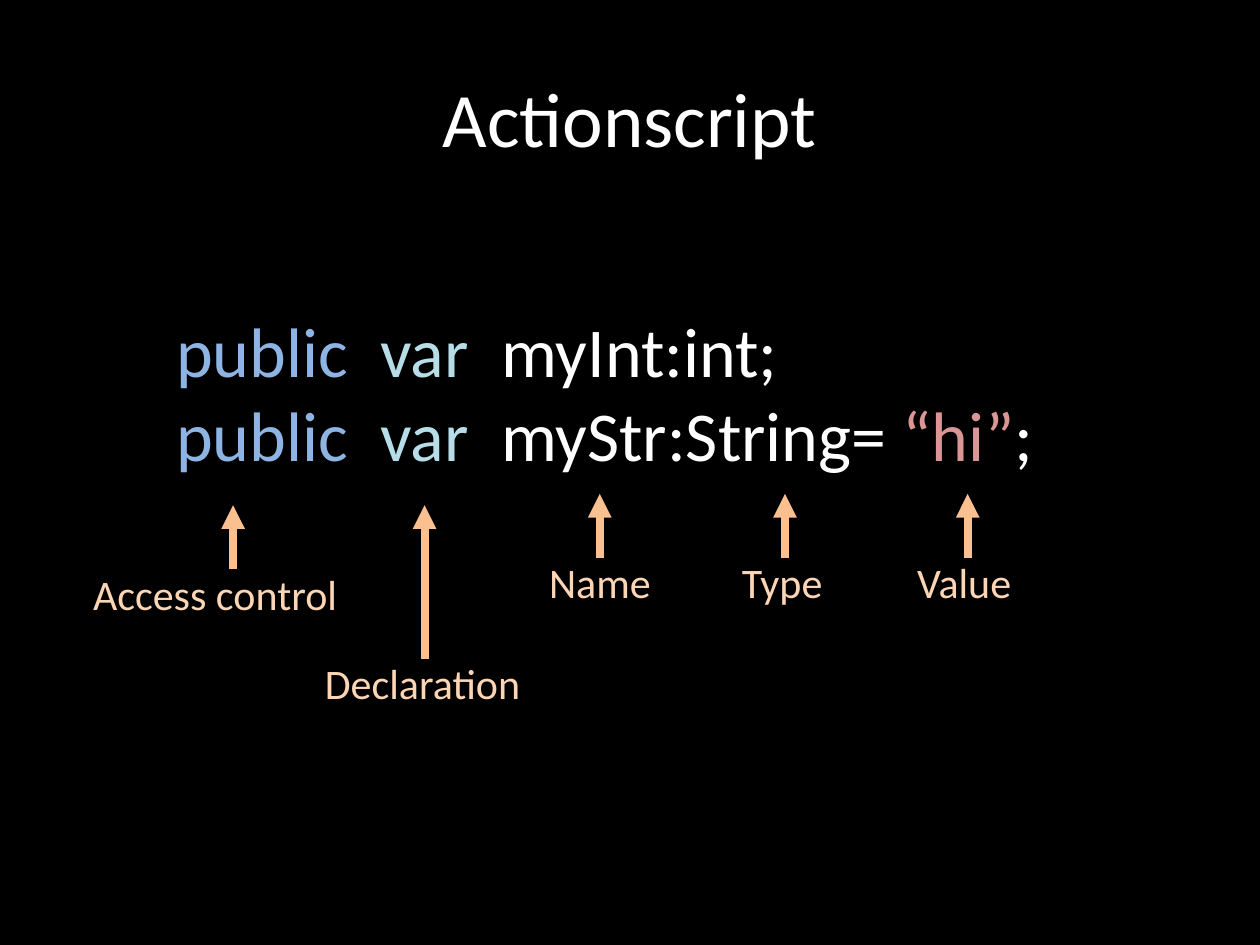
from dataclasses import dataclass

from pptx import Presentation
from pptx.dml.color import RGBColor
from pptx.enum import shapes, text
from pptx.oxml.ns import qn
from pptx.util import Inches, Pt
from lxml import etree


@dataclass(frozen=True)
class Theme:
    font: str = "Calibri"
    background: str = "000000"
    plain: str = "FFFFFF"
    access: str = "8EB4E3"
    declaration: str = "B7DEE8"
    value: str = "D99694"
    label: str = "FCD5B5"
    arrow: str = "FAC090"
    title_size: float = 44
    code_size: float = 40
    label_size: float = 24
    arrow_width: float = 4.5


@dataclass(frozen=True)
class Span:
    words: str
    colour: str


@dataclass(frozen=True)
class Callout:
    words: str
    left: float
    width: float
    arrow_x: float
    arrow_tip: float
    arrow_foot: float


THEME = Theme()
LABEL_RISE = 0.06  # a label's box starts slightly above the foot of its arrow
CODE_TABS = (1.62, 2.58)

KEYWORDS = [Span("public\t", THEME.access), Span("var\t", THEME.declaration)]
CODE = [
    KEYWORDS + [Span("myInt:int;", THEME.plain)],
    KEYWORDS + [Span("myStr:String= ", THEME.plain),
                Span("“hi”", THEME.value), Span(";", THEME.plain)],
]
CALLOUTS = [
    Callout("Access control", 0.64, 2.17, 1.85, 4.01, 4.52),
    Callout("Declaration", 2.48, 1.78, 3.37, 4.01, 5.23),
    Callout("Name", 4.26, 1.02, 4.76, 3.92, 4.43),
    Callout("Type", 5.79, 0.86, 6.23, 3.92, 4.43),
    Callout("Value", 7.18, 0.98, 7.68, 3.92, 4.43),
]


def add_text(page, lines: list[list[Span]], place: tuple, size: float,
             align=text.PP_ALIGN.LEFT, **frame_format):
    box = page.shapes.add_textbox(*map(Inches, place))
    frame = box.text_frame
    for name, setting in frame_format.items():
        setattr(frame, name, setting)
    for index, line in enumerate(lines):
        para = frame.add_paragraph() if index else frame.paragraphs[0]
        para.alignment = align
        for span in line:
            run = para.add_run()
            run.text = span.words
            for name, setting in {"name": THEME.font, "size": Pt(size)}.items():
                setattr(run.font, name, setting)
            run.font.color.rgb = RGBColor.from_string(span.colour)
    return box


def set_tabs(box, stops: tuple) -> None:
    for para in box.text_frame.paragraphs:
        tabs = etree.SubElement(para._p.get_or_add_pPr(), qn("a:tabLst"))
        for stop in stops:
            etree.SubElement(tabs, qn("a:tab"), pos=str(Inches(stop)), algn="l")


def add_arrow(page, x: float, foot: float, tip: float) -> None:
    arrow = page.shapes.add_connector(
        shapes.MSO_CONNECTOR.STRAIGHT, *map(Inches, (x, foot, x, tip)))
    arrow.line.width = Pt(THEME.arrow_width)
    arrow.line.color.rgb = RGBColor.from_string(THEME.arrow)
    etree.SubElement(arrow.line._get_or_add_ln(), qn("a:tailEnd"), type="triangle")
    etree.SubElement(arrow._element.spPr, qn("a:effectLst"))


def add_callout(page, callout: Callout) -> None:
    place = (callout.left, callout.arrow_foot - LABEL_RISE, callout.width, 0.5)
    add_text(page, [[Span(callout.words, THEME.label)]], place, THEME.label_size,
             word_wrap=False, auto_size=text.MSO_AUTO_SIZE.SHAPE_TO_FIT_TEXT)
    add_arrow(page, callout.arrow_x, callout.arrow_foot, callout.arrow_tip)


def main() -> None:
    deck = Presentation()
    deck.slide_width, deck.slide_height = Inches(10), Inches(7.5)
    page = deck.slides.add_slide(deck.slide_layouts[6])
    page.background.fill.solid()
    page.background.fill.fore_color.rgb = RGBColor.from_string(THEME.background)

    add_text(page, [[Span("Actionscript", THEME.plain)]], (0.5, 0.3, 9, 1.25),
             THEME.title_size, text.PP_ALIGN.CENTER, word_wrap=True,
             vertical_anchor=text.MSO_ANCHOR.MIDDLE)
    code = add_text(page, CODE, (1.3, 2.39, 7.59, 1.45), THEME.code_size,
                    word_wrap=True, auto_size=text.MSO_AUTO_SIZE.SHAPE_TO_FIT_TEXT)
    set_tabs(code, CODE_TABS)
    for callout in CALLOUTS:
        add_callout(page, callout)

    deck.save("out.pptx")


if __name__ == "__main__":
    main()
